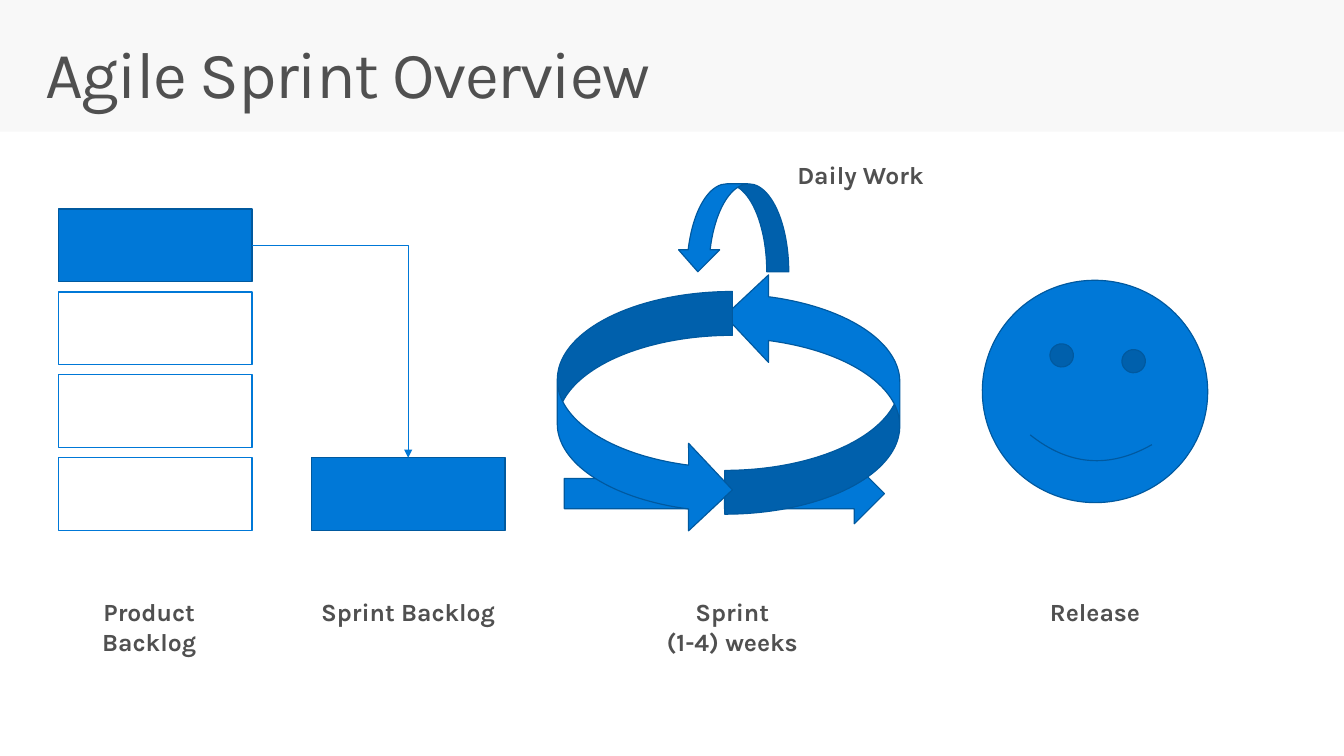
"""Build the Agile Sprint Overview slide."""
from lxml import etree
from pptx import Presentation
from pptx.dml.color import RGBColor
from pptx.enum.shapes import MSO_CONNECTOR, MSO_SHAPE
from pptx.enum.text import MSO_ANCHOR, MSO_AUTO_SIZE, PP_ALIGN
from pptx.oxml.ns import qn
from pptx.util import Pt

RECTANGLE = MSO_SHAPE.RECTANGLE
RIGHT_ARROW = MSO_SHAPE.RIGHT_ARROW
CURVED_ARROW = MSO_SHAPE.CURVED_RIGHT_ARROW
SMILEY = MSO_SHAPE.SMILEY_FACE
LEFT, CENTER = PP_ALIGN.LEFT, PP_ALIGN.CENTER

FONT = "Karla"
COLORS = {"band": "F8F8F8", "white": "FFFFFF", "text": "505050",
          "blue": "0078D7", "dark blue": "00599F"}
TITLE = "Agile Sprint Overview"
SLIDE_WIDTH, SLIDE_HEIGHT = 979.2, 550.8
PANEL_TOP = 95.8

BACKLOG_COUNT = 4
BACKLOG_LEFT, BACKLOG_TOP, BACKLOG_PITCH = 42.5, 152.3, 60.4
SPRINT_BACKLOG_LEFT = 226.8
ITEM_WIDTH, ITEM_HEIGHT = 141.2, 52.8

SPRINT_SHAPES = [
    (RIGHT_ARROW, (411.1, 337.7, 116.6, 43.9), 0, ()),
    (RIGHT_ARROW, (527.8, 337.7, 116.6, 43.9), 0, ()),
    (CURVED_ARROW, (528, 198.2, 127.6, 176.4), 180, ()),
    (CURVED_ARROW, (406, 212.4, 127.6, 176.4), 0, ()),
    (CURVED_ARROW, (502, 125.4, 64.1, 81.2), 90, (0.25, 0.468, 0.25)),
    (SMILEY, (715.7, 204.2, 164.2, 162), 4.6, ()),
]
LABEL_TOP, LABEL_WIDTH = 431.3, 149.8
LABELS = [
    ("Product Backlog", (33.8, LABEL_TOP, LABEL_WIDTH, 28.8), CENTER),
    ("Sprint Backlog", (222.5, LABEL_TOP, LABEL_WIDTH, 28.8), CENTER),
    ("Sprint\n(1-4) weeks", (458.6, LABEL_TOP, LABEL_WIDTH, 51.1), CENTER),
    ("Release", (722.9, LABEL_TOP, LABEL_WIDTH, 28.8), CENTER),
    ("Daily Work", (573.8, 113, 107.3, 28.8), LEFT),
]


def color(name):
    return RGBColor.from_string(COLORS[name])


def points(box):
    return [Pt(length) for length in box]


def add_shape(slide, kind, box, fill="blue", line="dark blue"):
    shape = slide.shapes.add_shape(kind, *points(box))
    shape.shadow.inherit = False
    shape.fill.solid()
    shape.fill.fore_color.rgb = color(fill)
    if line:
        shape.line.color.rgb = color(line)
        shape.line.width = Pt(0.85)
    else:
        shape.line.fill.background()
    return shape


def style_run(run, size, bold):
    run.font.name = FONT
    run.font.size = Pt(size)
    run.font.bold = bold
    run.font.color.rgb = color("text")


def add_title(slide):
    title = slide.shapes.title
    title.left, title.top, title.width, title.height = points((21.6, 23, 936, 72))
    frame = title.text_frame
    frame.text = TITLE
    frame.word_wrap = True
    frame.auto_size = MSO_AUTO_SIZE.NONE
    frame.vertical_anchor = MSO_ANCHOR.TOP
    frame.margin_left = frame.margin_right = Pt(11.5)
    frame.margin_top = frame.margin_bottom = Pt(7.2)
    paragraph = frame.paragraphs[0]
    paragraph.alignment = LEFT
    paragraph.line_spacing = 0.9
    paragraph.space_before = Pt(0)
    run = paragraph.runs[0]
    style_run(run, 48, False)
    run.font._element.set("spc", "-100")


def add_backlogs(slide):
    items = []
    for row in range(BACKLOG_COUNT):
        top = BACKLOG_TOP + row * BACKLOG_PITCH
        fill, line = ("white", "blue") if row else ("blue", "dark blue")
        box = (BACKLOG_LEFT, top, ITEM_WIDTH, ITEM_HEIGHT)
        items.append(add_shape(slide, RECTANGLE, box, fill, line))
    box = (SPRINT_BACKLOG_LEFT, top, ITEM_WIDTH, ITEM_HEIGHT)
    sprint_backlog = add_shape(slide, RECTANGLE, box)
    add_elbow_arrow(slide, items[0], sprint_backlog)


def add_elbow_arrow(slide, source, target):
    connector = slide.shapes.add_connector(MSO_CONNECTOR.ELBOW, 0, 0, 0, 0)
    connector.begin_connect(source, 3)
    connector.end_connect(target, 0)
    connector.line.color.rgb = color("blue")
    connector.line.width = Pt(0.75)
    properties = connector._element.spPr
    properties.find(qn("a:prstGeom")).set("prst", "bentConnector2")
    etree.SubElement(connector.line._get_or_add_ln(), qn("a:tailEnd"), type="triangle")
    etree.SubElement(properties, qn("a:effectLst"))


def add_label(slide, text, box, alignment):
    frame = slide.shapes.add_textbox(*points(box)).text_frame
    frame.word_wrap = True
    frame.auto_size = MSO_AUTO_SIZE.SHAPE_TO_FIT_TEXT
    frame.text = text
    for paragraph in frame.paragraphs:
        paragraph.alignment = alignment
        for run in paragraph.runs:
            style_run(run, 18, True)


def main():
    presentation = Presentation()
    presentation.slide_width = Pt(SLIDE_WIDTH)
    presentation.slide_height = Pt(SLIDE_HEIGHT)
    slide = presentation.slides.add_slide(presentation.slide_layouts[5])
    slide.background.fill.solid()
    slide.background.fill.fore_color.rgb = color("band")
    panel = (0, PANEL_TOP, SLIDE_WIDTH, SLIDE_HEIGHT - PANEL_TOP)
    add_shape(slide, RECTANGLE, panel, "white", None)
    add_title(slide)
    add_backlogs(slide)
    for kind, box, rotation, adjustments in SPRINT_SHAPES:
        shape = add_shape(slide, kind, box)
        shape.rotation = rotation
        for index, value in enumerate(adjustments):
            shape.adjustments[index] = value
    for text, box, alignment in LABELS:
        add_label(slide, text, box, alignment)
    presentation.save("out.pptx")


if __name__ == "__main__":
    main()
